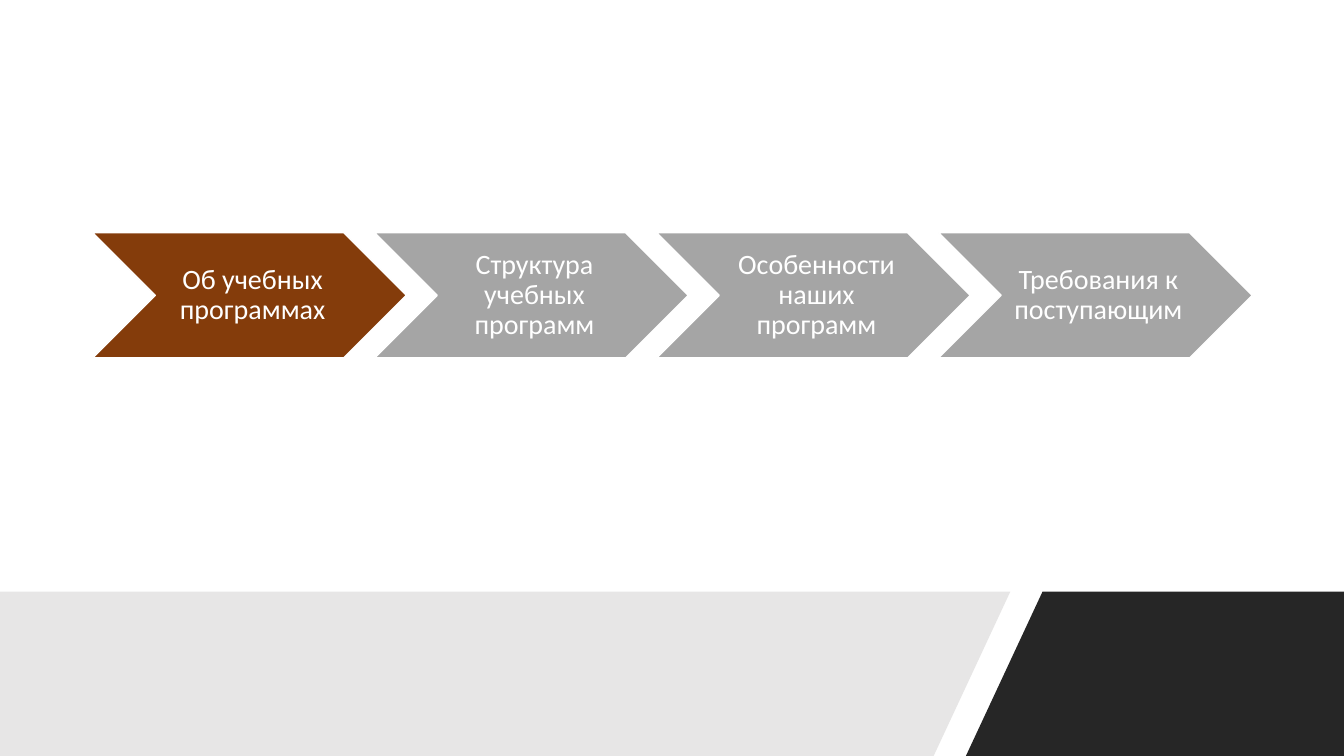
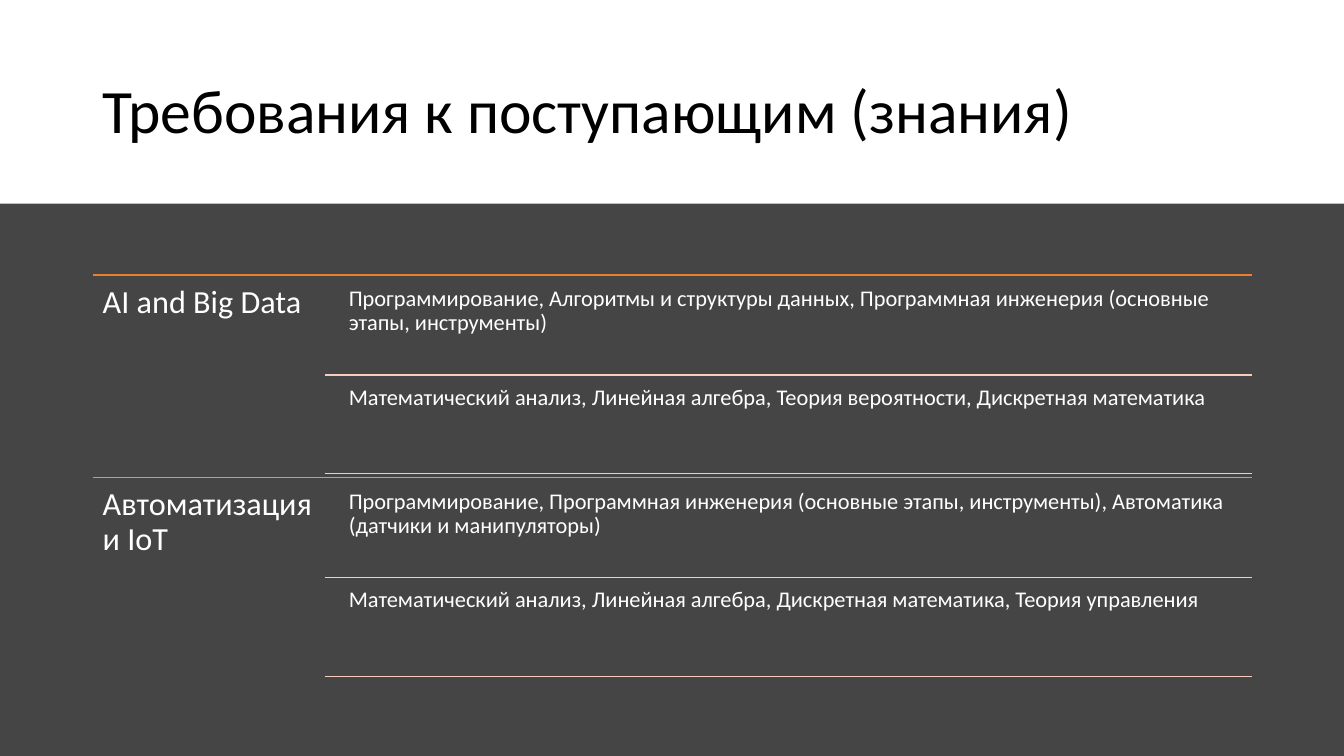
import pptx
import pptx.dml.color
import pptx.enum.shapes
import pptx.enum.text
import pptx.oxml.ns
import pptx.util
from lxml import etree

Inches = pptx.util.Inches
Pt = pptx.util.Pt
ANCHOR = pptx.enum.text.MSO_ANCHOR
ALIGN = pptx.enum.text.PP_ALIGN
SHAPE = pptx.enum.shapes.MSO_SHAPE

FONT = "Calibri"
COLORS = {
    "white": "FFFFFF",
    "black": "000000",
    "background": "454545",
    "dark_band": "262626",
    "light_band": "E7E6E6",
    "active": "843C0B",
    "gray": "A5A5A5",
    "orange": "ED7D31",
    "pale": "F6CCBE",
}

SLIDE_WIDTH, SLIDE_HEIGHT = 13.33, 7.5
LEFT, RIGHT = 0.92, 12.42

STEPS = [
    "Об учебных программах",
    "Структура учебных программ",
    "Особенности наших программ",
    "Требования к поступающим",
]
PROGRAMS = [
    ("AI and Big Data", "orange", [
        "Программирование, Алгоритмы и структуры данных, "
        "Программная инженерия (основные этапы, инструменты)",
        "Математический анализ, Линейная алгебра, Теория вероятности, "
        "Дискретная математика",
    ]),
    ("Автоматизация и IoT", "gray", [
        "Программирование, Программная инженерия (основные этапы, "
        "инструменты), Автоматика (датчики и манипуляторы)",
        "Математический анализ, Линейная алгебра, Дискретная математика, "
        "Теория управления",
    ]),
]


def color(name):
    return pptx.dml.color.RGBColor.from_string(COLORS[name])


def fill_shape(shape, fill, line=None):
    shape.shadow.inherit = False
    shape.fill.solid()
    shape.fill.fore_color.rgb = color(fill)
    if line:
        shape.line.color.rgb = color(line)
        shape.line.width = Pt(1)
    else:
        shape.line.fill.background()


def write_text(shape, text, size, text_color="white", align=ALIGN.LEFT,
               anchor=ANCHOR.TOP, insets=(0.1, 0.05, 0.1, 0.05)):
    """Format the frame and write one paragraph; insets are left, top, right, bottom."""
    frame = shape.text_frame
    frame.word_wrap = True
    frame.auto_size = pptx.enum.text.MSO_AUTO_SIZE.NONE
    frame.vertical_anchor = anchor
    (frame.margin_left, frame.margin_top,
     frame.margin_right, frame.margin_bottom) = map(Inches, insets)
    paragraph = frame.paragraphs[0]
    paragraph.alignment = align
    paragraph.line_spacing = 0.9
    run = paragraph.add_run()
    run.text = text
    run.font.name = FONT
    run.font.size = Pt(size)
    run.font.color.rgb = color(text_color)


def add_label(slide, text, size, left, top, width, height, inset):
    box = slide.shapes.add_textbox(*map(Inches, (left, top, width, height)))
    write_text(box, text, size, insets=(inset,) * 4)


def add_rule(slide, left, top, line_color):
    """Draw a horizontal rule from left to the right margin."""
    rule = slide.shapes.add_connector(
        pptx.enum.shapes.MSO_CONNECTOR.STRAIGHT,
        Inches(left), Inches(top), Inches(RIGHT), Inches(top))
    rule.line.color.rgb = color(line_color)
    rule.line.width = Pt(1)
    etree.SubElement(rule._element.spPr, pptx.oxml.ns.qn("a:effectLst"))


def add_polygon(slide, points, fill):
    start, *others = [(Inches(x), Inches(y)) for x, y in points]
    builder = slide.shapes.build_freeform(*start)
    builder.add_line_segments(others, close=True)
    fill_shape(builder.convert_to_shape(), fill)


def add_chevrons(slide, steps, active):
    width, height, top = 3.11, 1.24, 2.31
    pitch = (RIGHT - LEFT - width) / (len(steps) - 1)
    for index, text in enumerate(steps):
        chevron = slide.shapes.add_shape(
            SHAPE.CHEVRON, Inches(LEFT + index * pitch), Inches(top),
            Inches(width), Inches(height))
        fill_shape(chevron, "active" if index == active else "gray", "white")
        write_text(chevron, text, 20, align=ALIGN.CENTER,
                   anchor=ANCHOR.MIDDLE, insets=(0.09, 0.03, 0.03, 0.03))


def add_title(slide, text):
    """Write the title on a white band that lies behind it."""
    band = slide.shapes.add_shape(
        SHAPE.RECTANGLE, 0, Inches(-0.01), Inches(SLIDE_WIDTH), Inches(2.03))
    fill_shape(band, "white")
    title = slide.shapes.title
    band._element.addnext(title._element)
    title.left, title.top = Inches(LEFT), Inches(0.4)
    title.width, title.height = Inches(RIGHT - LEFT), Inches(1.45)
    write_text(title, text, 44, "black", anchor=ANCHOR.MIDDLE)


def add_program(slide, top, height, name, line_color, requirements):
    add_rule(slide, LEFT, top, line_color)
    add_label(slide, name, 23, LEFT, top, 2.3, height, 0.1)
    for index, text in enumerate(requirements):
        row_top = top + 0.05 + index * 0.98
        add_label(slide, text, 16, 3.39, row_top, RIGHT - 3.39, 0.93, 0.07)
        add_rule(slide, 3.22, row_top + 0.94, "pale")


def build_agenda(presentation):
    slide = presentation.slides.add_slide(presentation.slide_layouts[6])
    band_top = 5.87
    add_polygon(slide, [(10.34, band_top), (SLIDE_WIDTH, band_top),
                        (SLIDE_WIDTH, SLIDE_HEIGHT), (9.58, SLIDE_HEIGHT)],
                "dark_band")
    add_polygon(slide, [(0, band_top), (10.02, band_top),
                        (9.26, SLIDE_HEIGHT), (0, SLIDE_HEIGHT)],
                "light_band")
    add_chevrons(slide, STEPS, active=0)


def build_requirements(presentation):
    slide = presentation.slides.add_slide(presentation.slide_layouts[5])
    slide.background.fill.solid()
    slide.background.fill.fore_color.rgb = color("background")
    add_title(slide, "Требования к поступающим (знания)")
    height = 2.01
    for index, program in enumerate(PROGRAMS):
        add_program(slide, 2.73 + index * height, height, *program)


def main():
    presentation = pptx.Presentation()
    presentation.slide_width = Inches(SLIDE_WIDTH)
    presentation.slide_height = Inches(SLIDE_HEIGHT)
    build_agenda(presentation)
    build_requirements(presentation)
    presentation.save("out.pptx")


if __name__ == "__main__":
    main()
